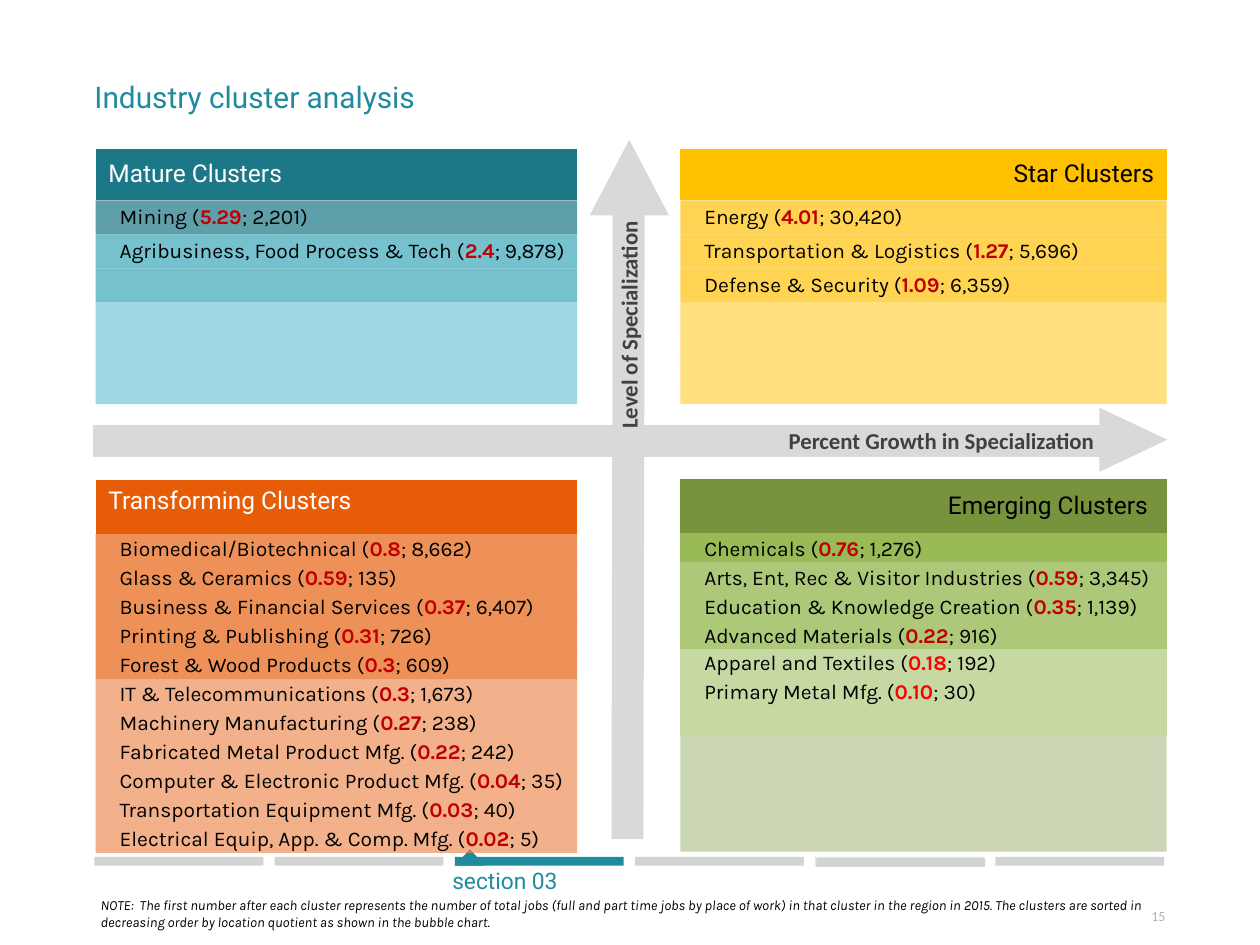
"""Build the industry cluster analysis slide."""
from dataclasses import dataclass

from lxml import etree
from pptx import Presentation
from pptx import util as u
from pptx.dml.color import RGBColor
from pptx.enum import shapes, text
from pptx.oxml.ns import qn

Inches = u.Inches
LEFT, RIGHT = text.PP_ALIGN.LEFT, text.PP_ALIGN.RIGHT
CENTER = text.PP_ALIGN.CENTER
TOP, MID, LOW = text.MSO_ANCHOR.TOP, text.MSO_ANCHOR.MIDDLE, text.MSO_ANCHOR.BOTTOM


@dataclass(frozen=True)
class Theme:
    """Hold the colours, fonts and type sizes."""
    teal: str = "208B9C"
    bar: str = "D1D3D4"
    pale: str = "E5E5E5"
    axis: str = "D9D9D9"
    label: str = "404040"
    page: str = "B2B2B2"
    black: str = "000000"
    white: str = "FFFFFF"
    score: str = "C00000"
    alert: str = "FF0000"
    head: str = "Roboto"
    body: str = "Karla"
    plain: str = "Calibri"
    title: int = 17
    group: int = 14
    mark: int = 13
    item: int = 12
    note: int = 8


T = Theme()
PLAIN_GRID = "{2D5ABB26-0587-4C30-8999-92F81FD0307C}"

MATURE = [("Mining", "5.29", "2,201"),
          ("Agribusiness, Food Process & Tech", "2.4", "9,878")]
STAR = [("Energy", "4.01", "30,420"),
        ("Transportation & Logistics", "1.27", "5,696"),
        ("Defense & Security", "1.09", "6,359")]
EMERGING = [("Chemicals", "0.76", "1,276"),
            ("Arts, Ent, Rec & Visitor Industries", "0.59", "3,345"),
            ("Education & Knowledge Creation", "0.35", "1,139"),
            ("Advanced Materials", "0.22", "916"),
            ("Apparel and Textiles", "0.18", "192"),
            ("Primary Metal Mfg.", "0.10", "30")]
CHANGING = [("Biomedical/Biotechnical", "0.8", "8,662"),
            ("Glass & Ceramics", "0.59", "135"),
            ("Business & Financial Services", "0.37", "6,407"),
            ("Printing & Publishing", "0.31", "726"),
            ("Forest & Wood Products", "0.3", "609"),
            ("IT & Telecommunications", "0.3", "1,673"),
            ("Machinery Manufacturing", "0.27", "238"),
            ("Fabricated Metal Product Mfg.", "0.22", "242"),
            ("Computer & Electronic Product Mfg.", "0.04", "35"),
            ("Transportation Equipment Mfg.", "0.03", "40"),
            ("Electrical Equip, App. & Comp. Mfg.", "0.02", "5")]
NOTE = ("NOTE:  The first number after each cluster represents the number of "
        "total jobs (full and part time jobs by place of work) in that cluster "
        "in the region in 2015. The clusters are sorted in decreasing order by "
        "location quotient as shown in the bubble chart.")


def style(run, size, face, color, bold=False, slant=False):
    """Set the font of one run."""
    font = run.font
    font.size, font.name = u.Pt(size), face
    font.bold, font.italic = bold, slant
    font.color.rgb = RGBColor.from_string(color)


def pad(box, left, top, right, low):
    """Set the margins of a text frame or a cell in inches."""
    box.margin_left, box.margin_top = Inches(left), Inches(top)
    box.margin_right, box.margin_bottom = Inches(right), Inches(low)


def write(slide, at, words, *look, align=LEFT, tight=False, turn=0, **more):
    """Add a wrapped text box and return it."""
    box = slide.shapes.add_textbox(*map(Inches, at))
    box.rotation = turn
    frame = box.text_frame
    frame.text, frame.word_wrap = words, True
    if tight:
        pad(frame, 0, 0, 0, 0)
    para = frame.paragraphs[0]
    para.alignment = align
    style(para.runs[0], *look, **more)
    return box


def paint(shape, color):
    """Give a shape a flat fill without line or shadow."""
    shape.shadow.inherit = False
    shape.fill.solid()
    shape.fill.fore_color.rgb = RGBColor.from_string(color)
    shape.line.fill.background()


def block(home, kind, at, color, turn=0):
    """Add a flat preset shape."""
    shape = home.shapes.add_shape(kind, *map(Inches, at))
    shape.rotation = turn
    paint(shape, color)


def axis(home, start, end):
    """Add a thick axis line."""
    line = home.shapes.add_connector(
        shapes.MSO_CONNECTOR.STRAIGHT, *map(Inches, start + end))
    line.line.color.rgb = RGBColor.from_string(T.axis)
    line.line.width = u.Pt(18.25)
    etree.SubElement(line._element.spPr, qn("a:effectLst"))


def tint(cell, color, alpha=100):
    """Fill a cell, see-through when alpha is below 100."""
    cell.fill.solid()
    cell.fill.fore_color.rgb = RGBColor.from_string(color)
    if alpha < 100:
        node = next(cell._tc.tcPr.iter(qn("a:srgbClr")))
        etree.SubElement(node, qn("a:alpha"), val=str(alpha * 1000))


def entry(cell, item, color):
    """Write one cluster with its score and jobs."""
    name, score, jobs = item
    para = cell.text_frame.paragraphs[0]
    parts = ((f" {name} (", T.black), (score, color), (f"; {jobs})", T.black))
    for words, shade in parts:
        run = para.add_run()
        run.text = words
        style(run, T.item, T.body, shade, bold=words == score)


def panel(slide, at, top, step, head, ink, fill, bands, items,
          align=LEFT, anchor=MID, low=(), alert=()):
    """Add one quadrant table with a heading and tinted rows."""
    tints = [(color, alpha) for color, alpha, count in bands for _ in range(count)]
    frame = slide.shapes.add_table(len(tints) + 1, 1, *map(Inches, at))
    grid = frame.table
    grid.first_row = grid.horz_banding = False
    grid._tbl.tblPr.find(qn("a:tableStyleId")).text = PLAIN_GRID
    grid.rows[0].height = Inches(top)
    cell = grid.cell(0, 0)
    tint(cell, fill)
    cell.text_frame.text, cell.vertical_anchor = head, anchor
    para = cell.text_frame.paragraphs[0]
    para.alignment = align
    style(para.runs[0], T.group, T.head, ink)
    for i, shade in enumerate(tints):
        grid.rows[i + 1].height = Inches(step)
        cell = grid.cell(i + 1, 0)
        tint(cell, *shade)
        pad(cell, 0.15, 0.01, 0.01, 0)
        cell.vertical_anchor = LOW if i in low else MID
        if i < len(items):
            entry(cell, items[i], T.alert if i in alert else T.score)
        else:
            para = cell.text_frame.paragraphs[0]
            etree.SubElement(para._p, qn("a:endParaRPr"), sz=str(T.item * 100))


def footer(slide):
    """Add the section progress bar and its labels."""
    rect = shapes.MSO_SHAPE.RECTANGLE
    for i in range(6):
        at = (0.75 + 1.43 * i, 6.8, 1.34, 0.07)
        if i == 2:
            home = slide.shapes.add_group_shape()
            block(home, rect, at, T.teal)
            pen = home.shapes.build_freeform(Inches(3.61), Inches(6.87))
            pen.add_line_segments([(Inches(3.73), Inches(6.74)),
                                   (Inches(3.85), Inches(6.87))])
            paint(pen.convert_to_shape(), T.teal)
        else:
            block(slide, rect, at, T.pale if i == 4 else T.bar)
    block(slide, rect, (6.48, 6.81, 1.34, 0.07), T.bar)
    write(slide, (3.59, 6.88, 1.34, 0.22), "section 03",
          T.mark, T.head, T.teal, tight=True)
    write(slide, (0.7, 7.07, 8.58, 0.37), NOTE, T.note, T.body, T.black, slant=True)
    page = write(slide, (8.93, 7.21, 0.32, 0.13), "15", T.note, T.plain, T.page,
                 align=RIGHT, tight=True)
    page.text_frame.vertical_anchor = LOW


def cross(slide):
    """Add the two labelled axes."""
    tip = shapes.MSO_SHAPE.ISOSCELES_TRIANGLE
    look = (T.mark, T.plain, T.label)
    axis(slide, (0.74, 3.5), (8.78, 3.5))
    block(slide, tip, (8.74, 3.22, 0.51, 0.54), T.axis, turn=90)
    write(slide, (4.59, 3.34, 4.23, 0.32), "Percent Growth in Specialization ",
          *look, align=RIGHT, bold=True)
    home = slide.shapes.add_group_shape()
    axis(home, (4.98, 6.66), (4.99, 1.47))
    block(home, tip, (4.68, 1.11, 0.63, 0.6), T.axis)
    write(slide, (3.74, 2.42, 2.5, 0.32), "Level of Specialization",
          *look, align=CENTER, turn=270, bold=True)


def main():
    """Build and save the slide."""
    deck = Presentation()
    deck.slide_width, deck.slide_height = Inches(10), Inches(7.5)
    slide = deck.slides.add_slide(deck.slide_layouts[6])
    title = write(slide, (0.75, 0.67, 8.5, 0.49), "Industry cluster analysis",
                  T.title, T.head, T.teal, tight=True)
    title.text_frame.paragraphs[0].line_spacing = 0.85
    footer(slide)
    cross(slide)
    panel(slide, (0.76, 1.18, 3.82, 2.02), 0.41, 0.27, "Mature Clusters",
          T.white, "1C7786",
          [("1C7786", 70, 1), ("3CA8BA", 70, 2), ("76CAD8", 70, 3)], MATURE)
    panel(slide, (5.4, 1.18, 3.86, 2.02), 0.41, 0.27, "Star Clusters",
          T.black, "FFC000", [("FFC000", 68, 3), ("FFC000", 50, 3)], STAR, align=RIGHT)
    panel(slide, (5.4, 3.8, 3.86, 2.91), 0.43, 0.23, "Emerging Clusters ",
          T.black, "77933C",
          [("99BA56", 100, 1), ("AEC87A", 100, 3), ("C7D9A3", 100, 3),
           ("77933C", 39, 4)], EMERGING, align=RIGHT, low=range(4), alert=(4, 5))
    panel(slide, (0.76, 3.81, 3.82, 2.91), 0.43, 0.23, "Transforming Clusters",
          T.white, "E75C07", [("E75C07", 67, 5), ("ED8C51", 67, 6)], CHANGING,
          anchor=TOP)
    deck.save("out.pptx")


if __name__ == "__main__":
    main()
